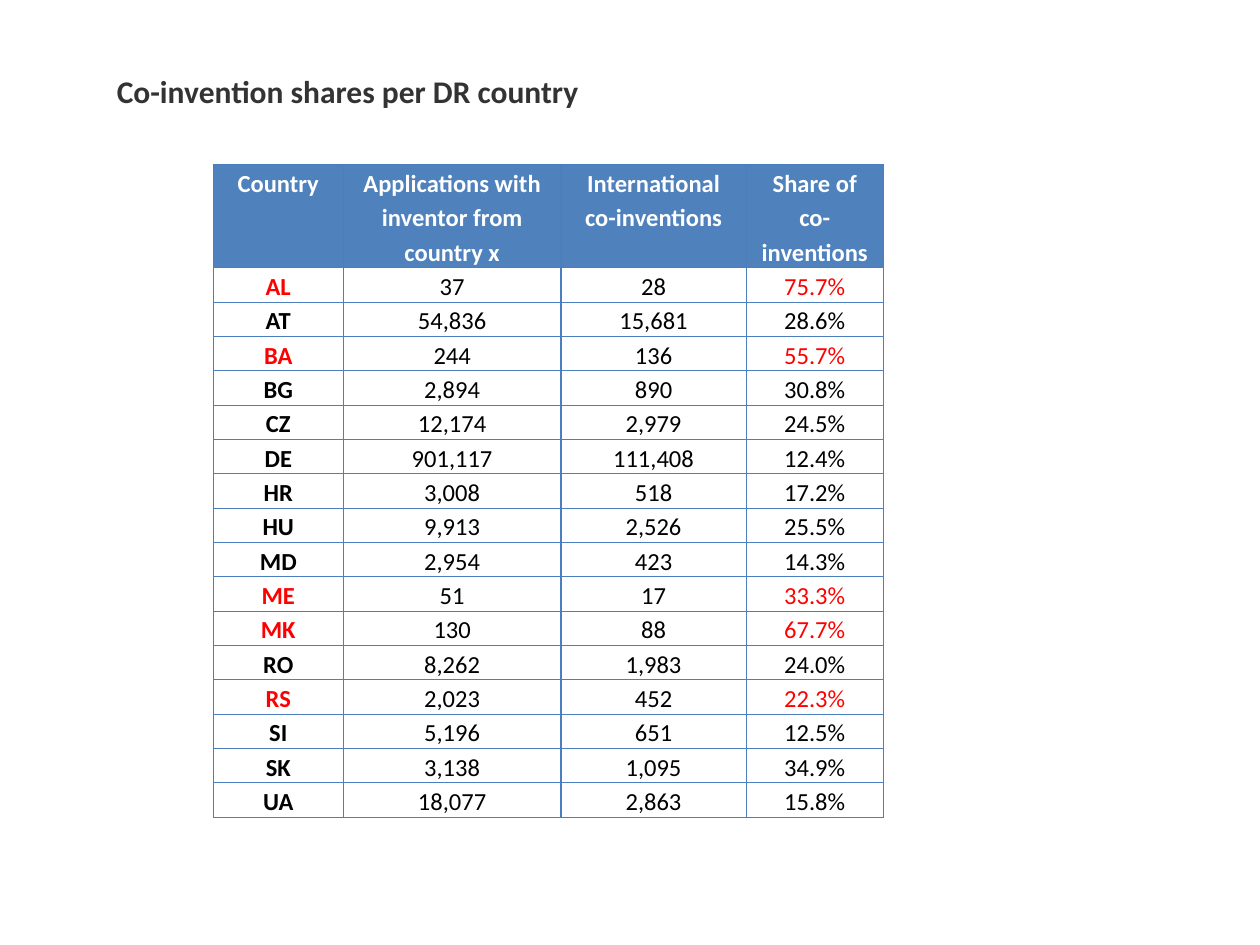
from pptx import Presentation
from pptx.dml.color import RGBColor
from pptx.enum.text import MSO_ANCHOR, MSO_AUTO_SIZE, PP_ALIGN
from pptx.oxml import parse_xml
from pptx.oxml.ns import nsdecls
from pptx.util import Cm, Pt

FONT = "Calibri"
BLUE = RGBColor(0x4F, 0x81, 0xBD)
EDGE = RGBColor(0x4B, 0x7E, 0xBC)
WHITE = RGBColor(0xFF, 0xFF, 0xFF)
BLACK = RGBColor(0, 0, 0)
GREY = RGBColor(0x33, 0x33, 0x33)
RED = RGBColor(0xFF, 0, 0)

HEADS = ("Country", "Applications with inventor from country x",
         "International co-inventions", "Share of co-inventions")
ROWS = (
    ("AL", "37", "28", "75.7%"),
    ("AT", "54,836", "15,681", "28.6%"),
    ("BA", "244", "136", "55.7%"),
    ("BG", "2,894", "890", "30.8%"),
    ("CZ", "12,174", "2,979", "24.5%"),
    ("DE", "901,117", "111,408", "12.4%"),
    ("HR", "3,008", "518", "17.2%"),
    ("HU", "9,913", "2,526", "25.5%"),
    ("MD", "2,954", "423", "14.3%"),
    ("ME", "51", "17", "33.3%"),
    ("MK", "130", "88", "67.7%"),
    ("RO", "8,262", "1,983", "24.0%"),
    ("RS", "2,023", "452", "22.3%"),
    ("SI", "5,196", "651", "12.5%"),
    ("SK", "3,138", "1,095", "34.9%"),
    ("UA", "18,077", "2,863", "15.8%"),
)
MARKED = {"AL", "BA", "ME", "MK", "RS"}  # countries shown in red
WIDTHS = (2.62, 4.39, 3.73, 2.77)
HEAD_H, ROW_H = 2.08, 0.69


def style(para, size, color, bold, align):
    para.alignment = align
    font = para.font
    font.name, font.size, font.bold = FONT, Pt(size), bold
    font.color.rgb = color


def add_title(slide, text):
    title = slide.shapes.title
    title.left, title.top = Cm(2.1), Cm(1.33)
    title.width, title.height = Cm(9.88), Cm(1.03)
    frame = title.text_frame
    frame.text = text
    frame.word_wrap = False
    frame.auto_size = MSO_AUTO_SIZE.NONE
    frame.vertical_anchor = MSO_ANCHOR.TOP
    style(frame.paragraphs[0], 18, GREY, True, PP_ALIGN.LEFT)


def add_edges(cell):
    props = cell._tc.get_or_add_tcPr()
    for side in ("lnL", "lnR", "lnT", "lnB"):
        props.append(parse_xml(
            f'<a:{side} {nsdecls("a")} w="{Pt(0.75)}"><a:solidFill>'
            f'<a:srgbClr val="{EDGE}"/></a:solidFill></a:{side}>'))


def fill_cell(cell, text, color, bold, back=None):
    add_edges(cell)
    if back is None:
        cell.fill.background()
    else:
        cell.fill.solid()
        cell.fill.fore_color.rgb = back
    cell.margin_left = cell.margin_right = Cm(0.18)
    cell.margin_top = cell.margin_bottom = 0
    cell.text = text
    para = cell.text_frame.paragraphs[0]
    para.line_spacing = 1.15
    style(para, 14, color, bold, PP_ALIGN.CENTER)


def add_grid(slide):
    height = HEAD_H + ROW_H * len(ROWS)
    table = slide.shapes.add_table(
        len(ROWS) + 1, len(HEADS), Cm(4.3), Cm(3.32),
        Cm(sum(WIDTHS)), Cm(height)).table
    table.first_row = table.horz_banding = False
    for col, width in zip(table.columns, WIDTHS):
        col.width = Cm(width)
    for row in table.rows:
        row.height = Cm(ROW_H)
    table.rows[0].height = Cm(HEAD_H)

    # Header row
    for c, text in enumerate(HEADS):
        fill_cell(table.cell(0, c), text, WHITE, True, BLUE)
    # Countries: code in bold, code and share in red where marked
    for r, row in enumerate(ROWS, 1):
        for c, text in enumerate(row):
            red = row[0] in MARKED and c in (0, 3)
            fill_cell(table.cell(r, c), text, RED if red else BLACK, c == 0)


def main():
    deck = Presentation()
    deck.slide_width, deck.slide_height = Cm(25.4), Cm(19.05)
    slide = deck.slides.add_slide(deck.slide_layouts[5])
    add_title(slide, "Co-invention shares per DR country")
    add_grid(slide)
    deck.save("out.pptx")


if __name__ == "__main__":
    main()
